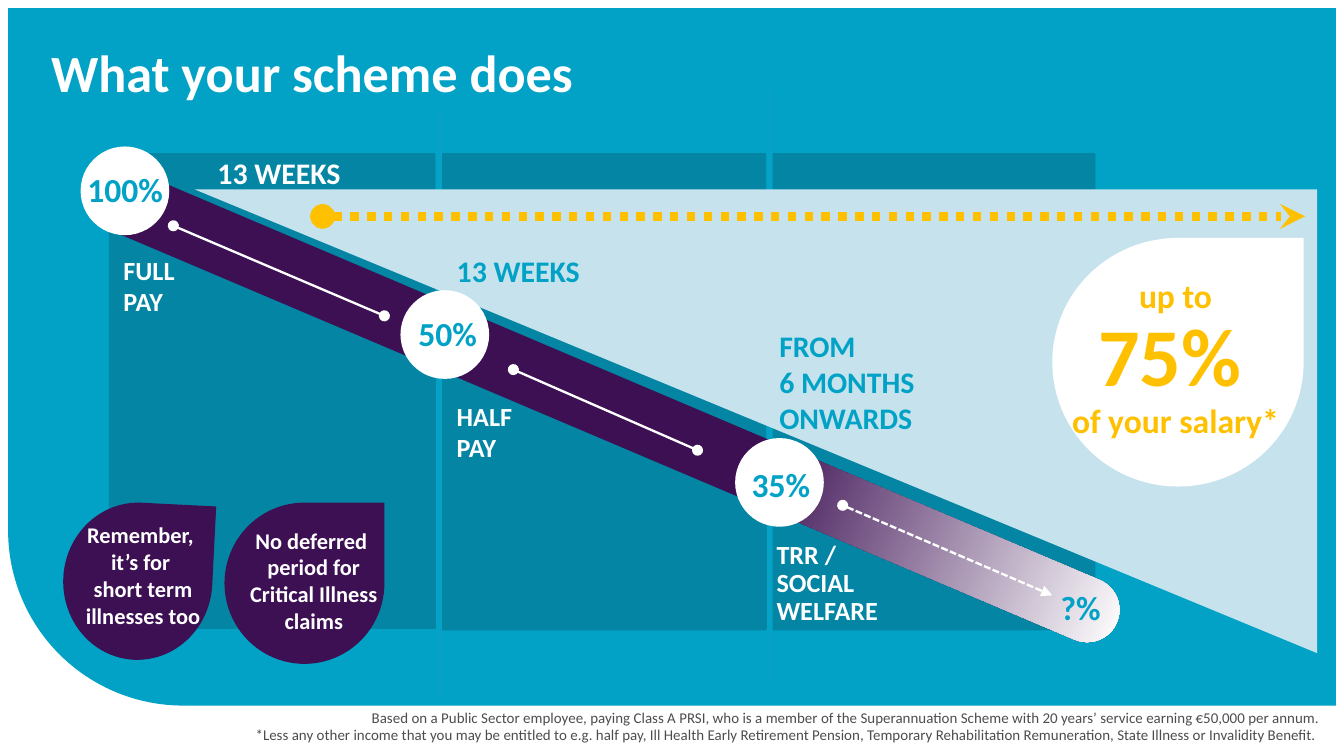
from pptx import Presentation
from pptx.dml.color import RGBColor
from pptx.enum import dml, shapes, text
from pptx.oxml import ns, xmlchemy
from pptx.util import Inches, Pt

THEME = {
    "font": "Calibri",
    "colors": {
        "white": "FFFFFF", "sky": "01A2C6", "divider": "05A1C6", "teal": "0385A3",
        "pale": "C6E3ED", "purple": "3C1053", "gold": "FFC000", "grey": "4D4D4D",
    },
    "sizes": {"title": 28, "huge": 44, "percent": 18, "period": 16,
              "label": 14, "bubble": 12, "note": 8},
}
COLORS = {name: RGBColor.from_string(rgb) for name, rgb in THEME["colors"].items()}
SIZES = {name: Pt(size) for name, size in THEME["sizes"].items()}
KIND, ALIGN = shapes.MSO_SHAPE, text.PP_ALIGN

prs = Presentation()
prs.slide_width, prs.slide_height = Inches(10), Inches(10 * 9 / 16)
s = prs.slides.add_slide(prs.slide_layouts[5])


def add_shape(kind, box, color, rotation=0, adjust=None):
    sp = s.shapes.add_shape(kind, *map(Inches, box))
    sp.shadow.inherit = False
    sp.fill.solid()
    sp.fill.fore_color.rgb = COLORS[color]
    sp.line.fill.background()
    sp.rotation = rotation
    if adjust is not None:
        sp.adjustments[0] = adjust
    return sp


def write(sp, paragraphs, color, bold=True, align=ALIGN.LEFT, spacing=None):
    """Fill a shape with (text, size name) paragraphs; a \\v is a line break."""
    tf = sp.text_frame
    tf.word_wrap = True
    for i, (words, size) in enumerate(paragraphs):
        p = tf.paragraphs[0] if i == 0 else tf.add_paragraph()
        p.text = words
        p.alignment, p.line_spacing = align, spacing
        fmt = {"name": THEME["font"], "size": SIZES[size], "bold": bold}
        for r in p.runs:
            for key, value in fmt.items():
                setattr(r.font, key, value)
            r.font.color.rgb = COLORS[color]


# Background panel and title
panel = add_shape(KIND.ROUND_1_RECTANGLE, (0.06, 0.06, 9.88, 5.19), "sky", 180, 0.251)
title = s.shapes.title
title.element.addprevious(panel.element)
title.left, title.top, title.width, title.height = map(Inches, (0.28, 0.06, 9, 0.94))
title.text_frame.vertical_anchor = text.MSO_ANCHOR.MIDDLE
write(title, [("What your scheme does", "title")], "white")

# Three pay periods with dividers, and the income gap above the band
add_shape(KIND.RIGHT_TRIANGLE, (0.81, 1.64, 7.43, 3.04), "teal")
connectors = {}
for name, start, end, color, width, dash, head, tail in [
    ("second divider", (5.73, 0.67), (5.73, 5.06), "divider", 3.5, None, None, None),
    ("first divider", (3.27, 0.81), (3.27, 5.2), "divider", 3.5, None, None, None),
    ("cover", (2.4, 1.61), (9.71, 1.61), "gold", 4.5,
     dml.MSO_LINE.ROUND_DOT, "oval", "stealth"),
    ("full pay", (1.29, 1.68), (2.86, 2.35), "white", 1.25, None, "oval", "oval"),
    ("half pay", (3.82, 2.75), (5.19, 3.35), "white", 1.25, None, "oval", "oval"),
    ("welfare", (6.27, 3.76), (7.83, 4.43), "white", 1.25,
     dml.MSO_LINE.SQUARE_DOT, "oval", "triangle"),
]:
    cn = s.shapes.add_connector(shapes.MSO_CONNECTOR.STRAIGHT, *map(Inches, start + end))
    cn.line.color.rgb = COLORS[color]
    cn.line.width = Pt(width)
    if dash:
        cn.line.dash_style = dash
    ln = cn.line._get_or_add_ln()
    for tag, arrow in (("a:headEnd", head), ("a:tailEnd", tail)):
        if arrow:
            end_mark = xmlchemy.OxmlElement(tag)
            end_mark.set("type", arrow)
            ln.append(end_mark)
    ln.getparent().append(ln.makeelement(ns.qn("a:effectLst")))
    connectors[name] = cn

for left, width, height in ((0.83, 2.41, 3.45), (3.29, 2.41, 3.55), (5.75, 2.4, 3.55)):
    add_shape(KIND.RECTANGLE, (left, 1.14, width, height), "teal")
add_shape(KIND.RIGHT_TRIANGLE, (1.45, 1.41, 8.35, 3.45), "pale", 180)

# Cover drop
add_shape(KIND.TEAR, (7.83, 1.77, 1.87, 1.85), "white")
cover = s.shapes.add_textbox(*map(Inches, (7.94, 2.06, 1.67, 1.24)))
tf = cover.text_frame
tf.vertical_anchor = text.MSO_ANCHOR.MIDDLE
tf.margin_left = tf.margin_right = tf.margin_top = tf.margin_bottom = 0
write(cover, [("up to ", "percent"), ("75% ", "huge"), ("of your salary* ", "percent")],
      "gold", align=ALIGN.CENTER, spacing=0.9)

# Falling pay band, fading out at its end
band = add_shape(KIND.ROUNDED_RECTANGLE, (0.34, 2.77, 8.3, 0.48), "purple", 23, 0.5)
band.fill.gradient()
band.fill.gradient_angle = 0
for stop, (position, color) in zip(band.fill.gradient_stops,
                                   ((0.64, "purple"), (0.99, "white"))):
    stop.position, stop.color.rgb = position, COLORS[color]

for left, top in ((0.6, 1.09), (2.98, 2.16), (5.47, 3.26)):
    add_shape(KIND.OVAL, (left, top, 0.66, 0.66), "white")
for name in ("cover", "full pay", "half pay", "welfare"):
    s.shapes[-1].element.addnext(connectors[name].element)

# Speech drops
add_shape(KIND.TEAR, (0.47, 3.74, 1.11, 1.17), "purple", 2.9)
add_shape(KIND.TEAR, (1.67, 3.74, 1.19, 1.2), "purple")

# Text on the chart: box, words, size, colour, alignment, line spacing
for box, words, size, color, align, spacing in [
    ((1.52, 1.1, 1.36, 0.37), "13 WEEKS", "period", "white", ALIGN.LEFT, None),
    ((3.3, 1.83, 1.58, 0.37), "13 WEEKS", "period", "sky", ALIGN.LEFT, None),
    ((5.7, 2.39, 2.97, 0.91), "FROM \v6 MONTHS \vONWARDS", "period", "sky", ALIGN.LEFT, None),
    ((0.82, 1.84, 1.36, 0.57), "FULL\vPAY", "label", "white", ALIGN.LEFT, None),
    ((3.3, 2.93, 1.58, 0.57), "HALF \vPAY", "label", "white", ALIGN.LEFT, None),
    ((5.68, 3.98, 1.86, 0.74), "TRR / \vSOCIAL \vWELFARE", "label", "white", ALIGN.LEFT, 0.9),
    ((0.44, 1.21, 0.98, 0.4), "100%", "percent", "sky", ALIGN.CENTER, None),
    ((2.84, 2.28, 0.98, 0.4), "50%", "percent", "sky", ALIGN.CENTER, None),
    ((5.32, 3.4, 0.98, 0.4), "35%", "percent", "sky", ALIGN.CENTER, None),
    ((7.55, 4.32, 0.98, 0.4), "?%", "percent", "sky", ALIGN.CENTER, None),
    ((1.75, 3.87, 1.17, 0.91), "No deferred \vperiod for Critical Illness claims",
     "bubble", "white", ALIGN.CENTER, None),
]:
    label = s.shapes.add_textbox(*map(Inches, box))
    write(label, [(words, size)], color, align=align, spacing=spacing)

reminder = s.shapes.add_textbox(*map(Inches, (0.48, 3.83, 1.17, 0.91)))
write(reminder, [("Remember, \vit’s for ", "bubble"), ("short term illnesses too", "bubble")],
      "white", align=ALIGN.CENTER)

# Footnotes
notes = s.shapes.add_textbox(*map(Inches, (0.83, 5.22, 9.1, 0.37)))
write(notes, [
    ("Based on a Public Sector employee, paying Class A PRSI, who is a member of the "
     "Superannuation Scheme with 20 years’ service earning €50,000 per annum.", "note"),
    ("*Less any other income that you may be entitled to e.g. half pay, Ill Health Early "
     "Retirement Pension, Temporary Rehabilitation Remuneration, State Illness or "
     "Invalidity Benefit. ", "note"),
], "grey", bold=False, align=ALIGN.RIGHT)

prs.save("out.pptx")
